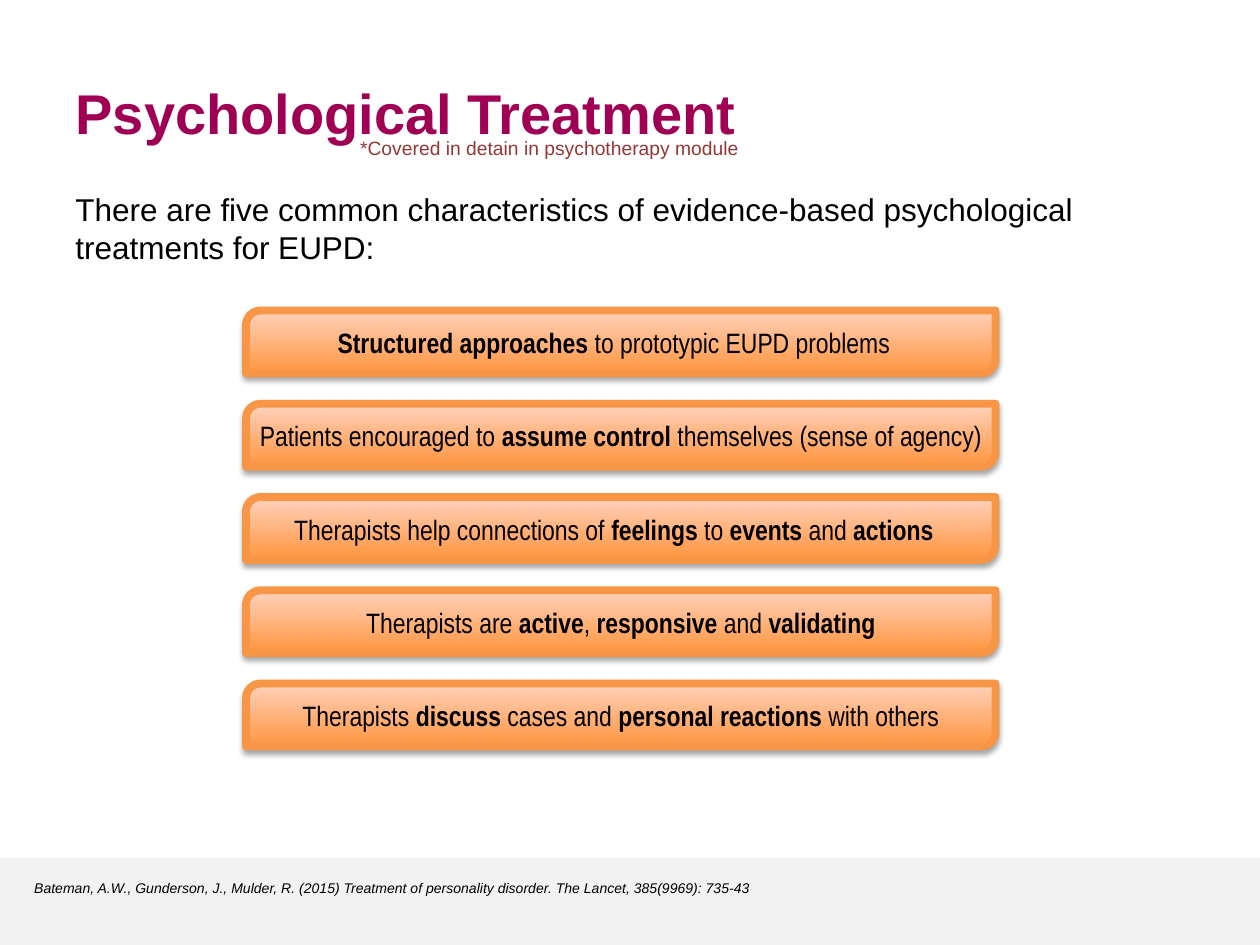
from dataclasses import dataclass

from lxml import etree
from pptx import Presentation
from pptx.dml.color import RGBColor
from pptx.enum.shapes import MSO_SHAPE
from pptx.enum.text import MSO_ANCHOR, PP_ALIGN
from pptx.oxml.ns import qn
from pptx.util import Cm, Pt

LEFT, CENTER = PP_ALIGN.LEFT, PP_ALIGN.CENTER
TOP, MIDDLE = MSO_ANCHOR.TOP, MSO_ANCHOR.MIDDLE
RECTANGLE = MSO_SHAPE.RECTANGLE
DIAGONAL_ROUND = MSO_SHAPE.ROUND_2_DIAG_RECTANGLE

BAR_LEFT, BAR_TOP, BAR_WIDTH, BAR_HEIGHT = 4.96, 6.26, 15.11, 1.27
BAR_PITCH = 1.88
LABEL_DROP, LABEL_HEIGHT = 0.18, 1.09


@dataclass
class Characteristic:
    """One bar; bold words stand between double asterisks."""
    text: str
    label_width: float = BAR_WIDTH


CHARACTERISTICS = [
    Characteristic("**Structured approaches **to prototypic EUPD problems", 14.83),
    Characteristic("Patients encouraged to **assume control **themselves (sense of agency)"),
    Characteristic("Therapists help connections of **feelings** to **events** and **actions**", 14.83),
    Characteristic("Therapists are **active**, **responsive** and **validating**"),
    Characteristic("Therapists **discuss** cases and **personal reactions **with others"),
]


def color(value: str) -> RGBColor:
    """Return the colour of a hex string."""
    return RGBColor.from_string(value)


def place(shape, left: float, top: float, width: float, height: float) -> None:
    """Move and size a shape in centimetres."""
    shape.left, shape.top = Cm(left), Cm(top)
    shape.width, shape.height = Cm(width), Cm(height)


def write(shape, text: str, *, size: float, font: str = "Arial", fill: str = "000000",
          bold: bool = False, italic: bool = False, align=LEFT, anchor=TOP) -> None:
    """Write one paragraph, switching bold at each double asterisk."""
    frame = shape.text_frame
    frame.word_wrap = True
    frame.vertical_anchor = anchor
    paragraph = frame.paragraphs[0]
    paragraph.alignment = align
    for index, part in enumerate(text.split("**")):
        if not part:
            continue
        run = paragraph.add_run()
        run.text = part
        run.font.name, run.font.size = font, Pt(size)
        run.font.bold = bold or index % 2 == 1
        run.font.italic = italic
        run.font.color.rgb = color(fill)


def add_text(shapes, box: tuple[float, float, float, float], text: str, **style) -> None:
    """Add a text box with one formatted paragraph."""
    write(shapes.add_textbox(*map(Cm, box)), text, **style)


def add_shadow(shape) -> None:
    """Give a shape a soft shadow straight below it."""
    shape.shadow.inherit = False
    effects = shape._element.spPr.find(qn("a:effectLst"))
    shadow = etree.SubElement(effects, qn("a:outerShdw"), blurRad=str(Pt(3.1)),
                              dist=str(Pt(1.8)), dir="5400000", rotWithShape="0")
    black = etree.SubElement(shadow, qn("a:srgbClr"), val="000000")
    etree.SubElement(black, qn("a:alpha"), val="35000")


def add_bar(slide, item: Characteristic, top: float) -> None:
    """Add a group of a gradient bar and its label."""
    shapes = slide.shapes.add_group_shape().shapes
    bar = shapes.add_shape(DIAGONAL_ROUND, Cm(BAR_LEFT), Cm(top), Cm(BAR_WIDTH), Cm(BAR_HEIGHT))
    bar.adjustments[0] = 0.23
    bar.fill.gradient()
    bar.fill.gradient_angle = 90
    for stop, value in zip(bar.fill.gradient_stops, ("FF953E", "FFD2BD")):
        stop.color.rgb = color(value)
    bar.line.color.rgb = color("F79646")
    bar.line.width = Pt(4.5)
    add_shadow(bar)
    add_text(shapes, (BAR_LEFT, top + LABEL_DROP, item.label_width, LABEL_HEIGHT),
             item.text, size=16, font="Arial Narrow", align=CENTER)


def main() -> None:
    """Build and save the slide."""
    presentation = Presentation()
    presentation.slide_width, presentation.slide_height = Cm(25.4), Cm(19.05)
    slide = presentation.slides.add_slide(presentation.slide_layouts[5])
    shapes = slide.shapes

    band = shapes.add_shape(RECTANGLE, 0, Cm(17.3), Cm(25.4), Cm(1.75))
    band.shadow.inherit = False
    band.fill.solid()
    band.fill.fore_color.rgb = color("F2F2F2")
    band.line.fill.background()

    place(shapes.title, 1.27, 1.45, 21.59, 1.88)
    write(shapes.title, "Psychological Treatment", size=32, fill="A00054", bold=True, anchor=MIDDLE)
    shapes.title.text_frame.margin_bottom = Cm(0.37)
    add_text(shapes, (0.44, 17.6, 21.23, 0.61),
             "Bateman, A.W., Gunderson, J., Mulder, R. (2015) Treatment of personality disorder. "
             "The Lancet, 385(9969): 735-43", size=8, italic=True)
    add_text(shapes, (7.01, 2.62, 8.23, 0.74), "*Covered in detain in psychotherapy module",
             size=11, fill="953735")
    add_text(shapes, (1.27, 3.71, 22.48, 1.8),
             "There are five common characteristics of evidence-based psychological "
             "treatments for EUPD:", size=18)

    for index, item in enumerate(CHARACTERISTICS):
        add_bar(slide, item, BAR_TOP + index * BAR_PITCH)

    presentation.save("out.pptx")


if __name__ == "__main__":
    main()
